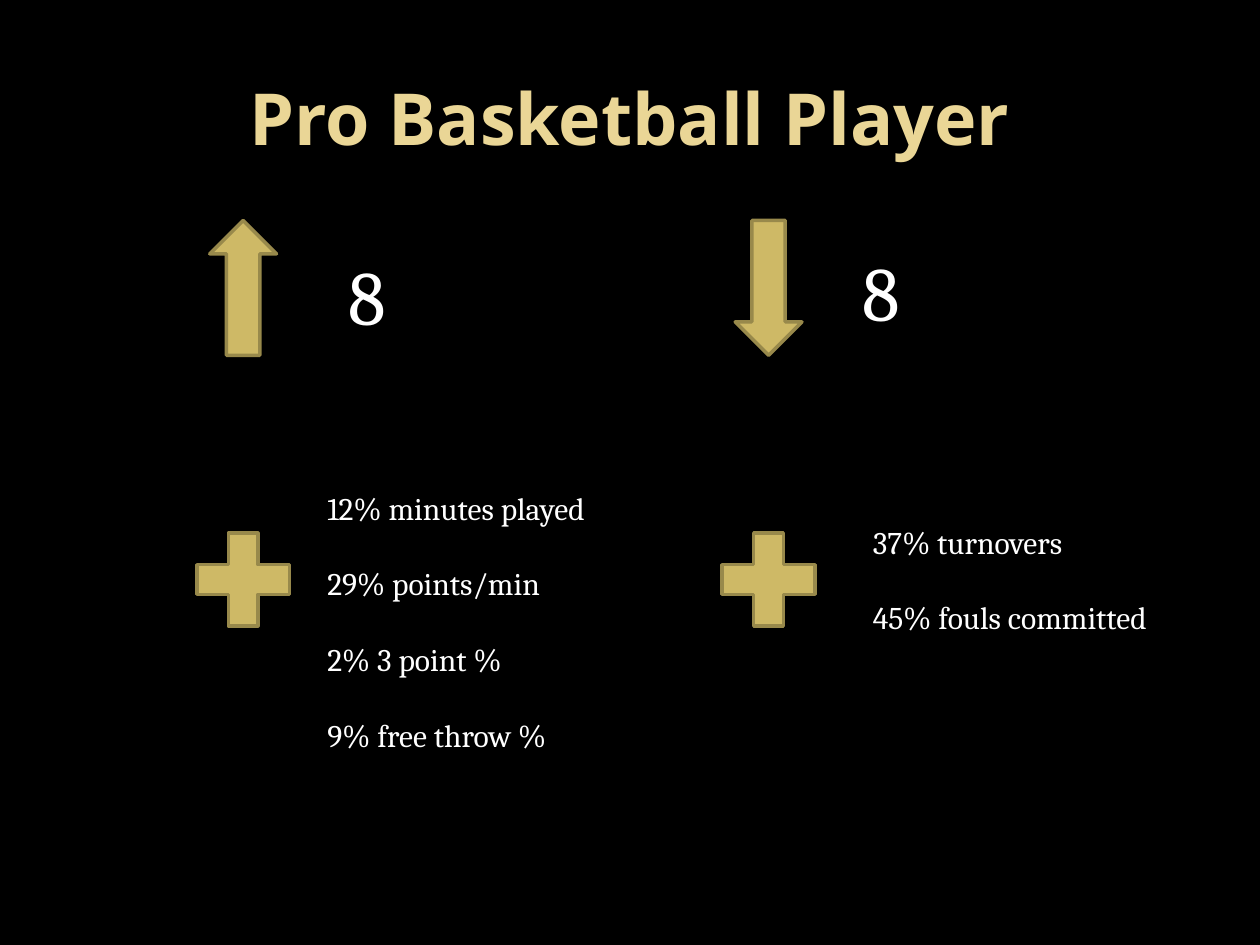
"""Build a slide of what raises and lowers a basketball player's score."""
import dataclasses
import typing

import pptx
import pptx.dml.color
import pptx.enum.shapes
import pptx.enum.text
import pptx.util

Inches = pptx.util.Inches
Pt = pptx.util.Pt
Shape = pptx.enum.shapes.MSO_SHAPE
Fit = pptx.enum.text.MSO_AUTO_SIZE

COLORS = {"back": "000000", "title": "EAD696", "gold": "CEB966",
          "edge": "98894B", "text": "FFFFFF"}
ARROW_SIZE = (0.53, 1.07)
PLUS_SIZE = (1, 1)
ARROW_TOP, PLUS_TOP = 1.75, 4.1


class Box(typing.NamedTuple):
    left: float
    top: float
    width: float
    height: float

    def place(self) -> list:
        return [Inches(side) for side in self]


@dataclasses.dataclass
class Column:
    mid: float
    arrow: Shape
    count: str
    count_box: Box
    facts: list[str]
    facts_box: Box


COLUMNS = [
    Column(1.93, Shape.UP_ARROW, "8", Box(2.67, 1.92, 1.25, 0.84),
           ["12% minutes played", "29% points/min", "2% 3 point %",
            "9% free throw %"], Box(2.5, 3.83, 2.5, 2.22)),
    Column(6.1, Shape.DOWN_ARROW, "8", Box(6.75, 1.89, 1, 0.84),
           ["37% turnovers", "45% fouls committed"],
           Box(6.83, 4.1, 2.42, 1.31)),
]


def tint(name: str) -> pptx.dml.color.RGBColor:
    """Return the named colour."""
    return pptx.dml.color.RGBColor.from_string(COLORS[name])


def add_run(para, text: str, face: str, size: float, color: str, bold: bool = False) -> None:
    """Add one styled run to a paragraph."""
    run = para.add_run()
    run.text = text
    run.font.name = face
    run.font.size = Pt(size)
    run.font.bold = bold
    run.font.color.rgb = tint(color)


def add_title(slide, text: str) -> None:
    """Place and fill the title."""
    title = slide.shapes.title
    title.left, title.top, title.width, title.height = Box(0.5, 0.3, 9, 1.25).place()
    frame = title.text_frame
    frame.vertical_anchor = pptx.enum.text.MSO_ANCHOR.MIDDLE
    frame.auto_size = Fit.NONE
    para = frame.paragraphs[0]
    para.alignment = pptx.enum.text.PP_ALIGN.CENTER
    add_run(para, text, "Open Sans", 41, "title", True)


def add_sign(slide, kind: Shape, mid: float, top: float, size: tuple[float, float]) -> None:
    """Draw a gold sign centred on a column's axis."""
    width, height = size
    sign = slide.shapes.add_shape(kind, *Box(mid - width / 2, top, width, height).place())
    sign.shadow.inherit = False
    sign.fill.solid()
    sign.fill.fore_color.rgb = tint("gold")
    sign.line.color.rgb = tint("edge")
    sign.line.width = Pt(2)


def add_lines(slide, box: Box, lines: list[str], size: float, gap: float = 0) -> None:
    """Write lines of text, with a gap between them."""
    frame = slide.shapes.add_textbox(*box.place()).text_frame
    frame.word_wrap = True
    frame.auto_size = Fit.SHAPE_TO_FIT_TEXT
    for rank, line in enumerate(lines):
        para = frame.add_paragraph() if rank else frame.paragraphs[0]
        if rank:
            para.space_before = Pt(gap)
        add_run(para, line, "Cambria", size, "text")


def main() -> None:
    """Build and save the deck."""
    deck = pptx.Presentation()
    deck.slide_width, deck.slide_height = Inches(10), Inches(7.5)
    slide = deck.slides.add_slide(deck.slide_layouts[5])
    fill = slide.background.fill
    fill.solid()
    fill.fore_color.rgb = tint("back")
    add_title(slide, "Pro Basketball Player")
    for col in COLUMNS:
        add_sign(slide, col.arrow, col.mid, ARROW_TOP, ARROW_SIZE)
        add_lines(slide, col.count_box, [col.count], 44)
        add_sign(slide, Shape.MATH_PLUS, col.mid, PLUS_TOP, PLUS_SIZE)
        add_lines(slide, col.facts_box, col.facts, 18, 21.6)
    deck.save("out.pptx")


if __name__ == "__main__":
    main()
